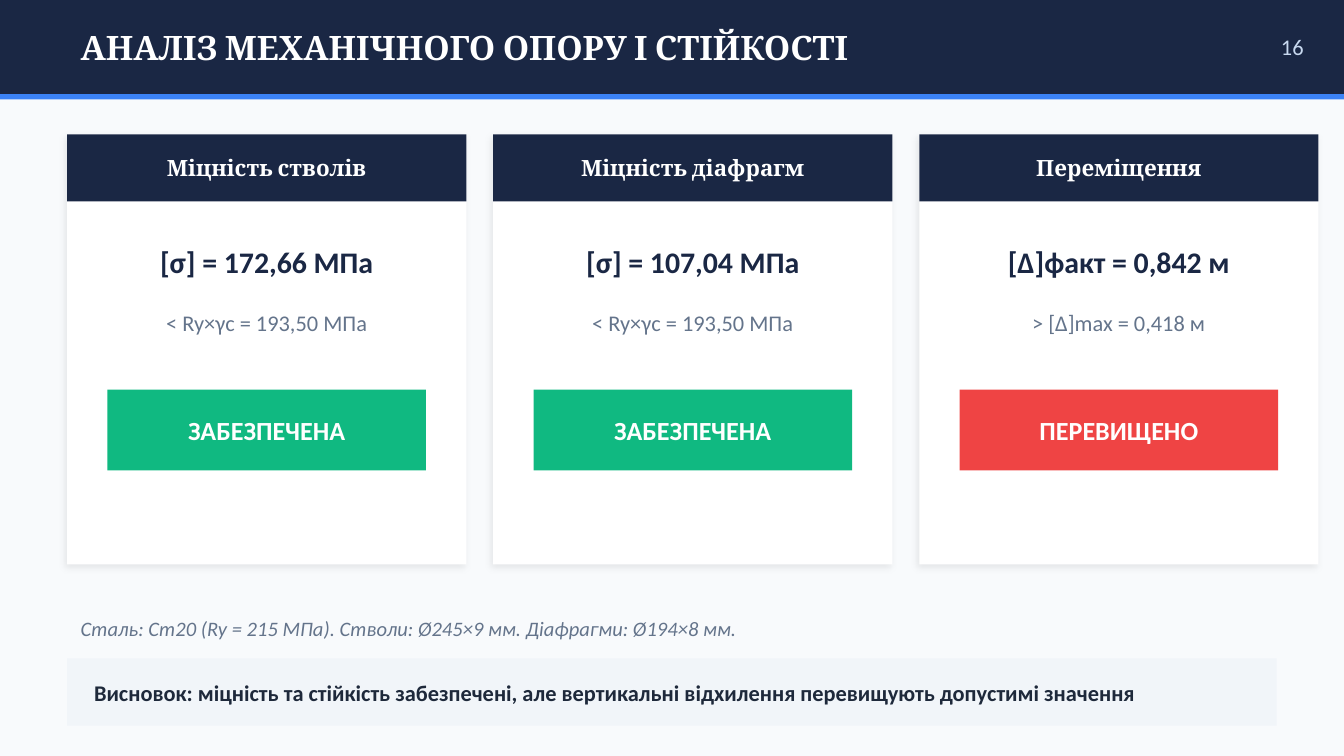
"""Build the slide on mechanical resistance and stability analysis."""
from dataclasses import dataclass
from typing import Optional

from lxml import etree
from pptx import Presentation
from pptx import util as u
from pptx.dml import color
from pptx.enum import shapes, text
from pptx.oxml import ns

COLORS = {
    "navy": "1A2744", "blue": "3B82F6", "white": "FFFFFF", "paper": "F8FAFC",
    "pale": "C8D9F0", "slate": "64748B", "green": "10B981", "red": "EF4444",
    "mist": "F1F5F9", "ink": "1E293B", "black": "000000",
}
SLIDE_COLS, SLIDE_ROWS = 100, 56.25
CELL = u.Inches(0.1)
LEFT, CENTER, RIGHT = text.PP_ALIGN.LEFT, text.PP_ALIGN.CENTER, text.PP_ALIGN.RIGHT
CARD_LEFT, CARD_TOP, CARD_COLS, CARD_ROWS, CARD_GAP = 5, 10, 29.7, 32, 2
SHADOW = {"blurRad": u.Pt(4), "dist": u.Pt(2), "dir": 135 * 60000,
          "algn": "bl", "rotWithShape": 0}
SHADOW_ALPHA = 8


@dataclass(frozen=True)
class Area:
    col: float
    row: float
    cols: float
    rows: float

    def emu(self) -> list[int]:
        return [round(n * CELL) for n in (self.col, self.row, self.cols, self.rows)]

    def band(self, inset: float, down: float, rows: float) -> "Area":
        return Area(self.col + inset, self.row + down, self.cols - 2 * inset, rows)


@dataclass(frozen=True)
class Style:
    size: float
    color: str
    name: str = "Calibri"
    bold: bool = False
    italic: bool = False
    align: text.PP_ALIGN = CENTER


@dataclass(frozen=True)
class Check:
    title: str
    value: str
    limit: str
    verdict: str
    signal: str


TITLE = Style(18, "white", "Cambria", bold=True, align=LEFT)
PAGE = Style(12, "pale", align=RIGHT)
HEADING = Style(12, "white", "Cambria", bold=True)
VALUE = Style(16, "navy", bold=True)
LIMIT = Style(12, "slate")
VERDICT = Style(14, "white", bold=True)
NOTE = Style(11, "slate", italic=True, align=LEFT)
CONCLUSION = Style(12, "ink", bold=True, align=LEFT)

CHECKS = [
    Check("Міцність стволів", "[σ] = 172,66 МПа", "< Ry×γс = 193,50 МПа", "ЗАБЕЗПЕЧЕНА", "green"),
    Check("Міцність діафрагм", "[σ] = 107,04 МПа", "< Ry×γс = 193,50 МПа", "ЗАБЕЗПЕЧЕНА", "green"),
    Check("Переміщення", "[Δ]факт = 0,842 м", "> [Δ]max = 0,418 м", "ПЕРЕВИЩЕНО", "red"),
]


def rgb(key: str) -> color.RGBColor:
    return color.RGBColor.from_string(COLORS[key])


def add_panel(slide, area: Area, fill: str, raised: bool = False) -> None:
    panel = slide.shapes.add_shape(shapes.MSO_SHAPE.RECTANGLE, *area.emu())
    panel.fill.solid()
    panel.fill.fore_color.rgb = rgb(fill)
    panel.line.fill.background()
    panel.shadow.inherit = False
    if raised:
        effects = panel._element.spPr.find(ns.qn("a:effectLst"))
        shadow = etree.SubElement(effects, ns.qn("a:outerShdw"),
                                  {key: str(value) for key, value in SHADOW.items()})
        tint = etree.SubElement(shadow, ns.qn("a:srgbClr"), val=COLORS["black"])
        etree.SubElement(tint, ns.qn("a:alpha"), val=str(SHADOW_ALPHA * 1000))


def add_label(slide, area: Area, wording: str, style: Style) -> None:
    frame = slide.shapes.add_textbox(*area.emu()).text_frame
    frame_format = {
        "word_wrap": True, "vertical_anchor": text.MSO_ANCHOR.MIDDLE,
        "margin_left": 0, "margin_top": 0, "margin_right": 0, "margin_bottom": 0,
    }
    for attribute, value in frame_format.items():
        setattr(frame, attribute, value)
    line = frame.paragraphs[0]
    line.alignment = style.align
    run = line.add_run()
    run.text = wording
    font_format = {"name": style.name, "size": u.Pt(style.size),
                   "bold": style.bold, "italic": style.italic}
    for attribute, value in font_format.items():
        setattr(run.font, attribute, value)
    run.font.color.rgb = rgb(style.color)


def add_block(slide, area: Area, fill: str, wording: str, style: Style,
              label_area: Optional[Area] = None) -> None:
    add_panel(slide, area, fill)
    add_label(slide, label_area or area, wording, style)


def add_card(slide, index: int, check: Check) -> None:
    card = Area(CARD_LEFT + index * (CARD_COLS + CARD_GAP), CARD_TOP, CARD_COLS, CARD_ROWS)
    add_panel(slide, card, "white", raised=True)
    add_block(slide, card.band(0, 0, 5), "navy", check.title, HEADING)
    add_label(slide, card.band(1, 7, 5), check.value, VALUE)
    add_label(slide, card.band(1, 12, 4), check.limit, LIMIT)
    add_block(slide, card.band(3, 19, 6), check.signal, check.verdict, VERDICT)


def main() -> None:
    deck = Presentation()
    deck.slide_width = round(SLIDE_COLS * CELL)
    deck.slide_height = round(SLIDE_ROWS * CELL)
    slide = deck.slides.add_slide(deck.slide_layouts[6])
    slide.background.fill.solid()
    slide.background.fill.fore_color.rgb = rgb("paper")

    add_block(slide, Area(0, 0, SLIDE_COLS, 7), "navy",
              "АНАЛІЗ МЕХАНІЧНОГО ОПОРУ І СТІЙКОСТІ", TITLE, Area(6, 1, 85, 5))
    add_label(slide, Area(92, 1, 5, 5), "16", PAGE)
    add_panel(slide, Area(0, 7, SLIDE_COLS, 0.4), "blue")

    for index, check in enumerate(CHECKS):
        add_card(slide, index, check)

    add_label(slide, Area(6, 45, 88, 3.5),
              "Сталь: Ст20 (Ry = 215 МПа). Стволи: Ø245×9 мм. Діафрагми: Ø194×8 мм.", NOTE)
    footer = Area(5, 49, 90, 5)
    add_block(slide, footer, "mist",
              "Висновок: міцність та стійкість забезпечені, але вертикальні відхилення "
              "перевищують допустимі значення", CONCLUSION, footer.band(2, 0, 5))
    deck.save("out.pptx")


if __name__ == "__main__":
    main()
